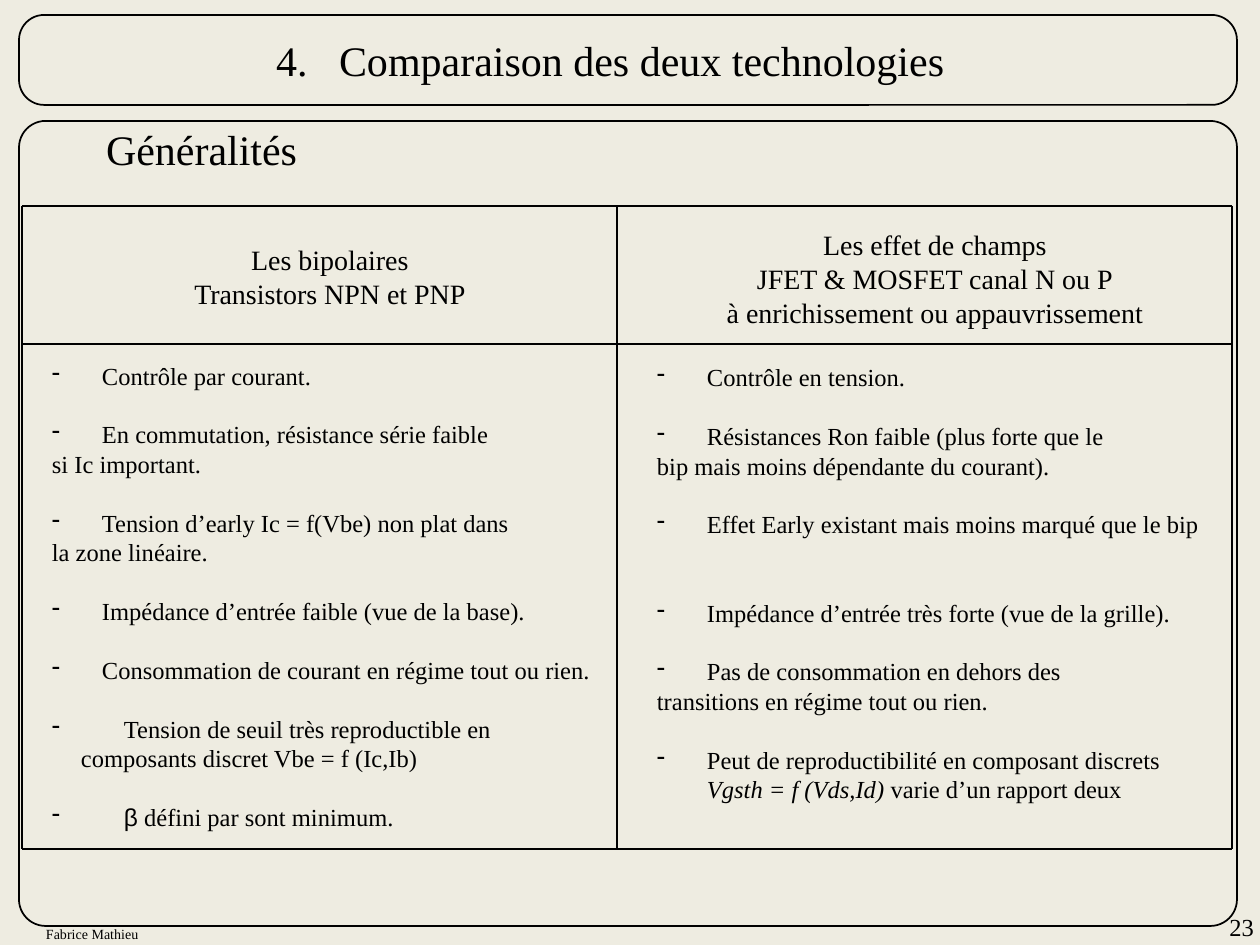
from dataclasses import dataclass

from lxml.etree import SubElement
from pptx import Presentation
from pptx.dml.color import RGBColor
from pptx.enum.shapes import MSO_CONNECTOR, MSO_SHAPE
from pptx.enum.text import MSO_AUTO_SIZE, PP_ALIGN
from pptx.oxml.ns import qn
from pptx.util import Pt

EMU_PER_PX = 914400 / 126
COLORS = {"background": "EEECE1", "ink": "000000"}
SERIF = "Times New Roman"
BLANK_LINE = 16.8  # points between two items


def px(length: int) -> int:
    return round(length * EMU_PER_PX)


def color(name: str) -> RGBColor:
    return RGBColor.from_string(COLORS[name])


@dataclass(frozen=True)
class Span:
    text: str
    italic: bool = False
    font: str = SERIF


@dataclass(frozen=True)
class Para:
    spans: tuple[Span, ...]
    size: int = 14
    align: PP_ALIGN = PP_ALIGN.LEFT
    before: float = 0
    margin: int = 0
    dash: bool = False
    tab: int = 0


@dataclass(frozen=True)
class Box:
    left: int
    top: int
    width: int
    height: int
    paras: tuple[Para, ...]
    inset: tuple[int, int] = (0, 0)
    wrap: bool = True


@dataclass(frozen=True)
class Frame:
    left: int
    top: int
    width: int
    height: int
    rounding: float


def plain(text: str, **options) -> Para:
    return Para((Span(text),), **options)


def heading(text: str) -> Para:
    return plain(text, size=16, align=PP_ALIGN.CENTER)


def item(*spans: Span | str, before: float = BLANK_LINE, margin: int = 50) -> Para:
    parts = tuple(Span(s) if isinstance(s, str) else s for s in spans)
    return Para(parts, before=before, margin=margin, dash=True)


def add_frame(page, frame: Frame) -> None:
    shape = page.shapes.add_shape(
        MSO_SHAPE.ROUNDED_RECTANGLE,
        px(frame.left), px(frame.top), px(frame.width), px(frame.height))
    shape.adjustments[0] = frame.rounding
    shape.shadow.inherit = False
    shape.fill.background()
    shape.line.color.rgb = color("ink")
    shape.line.width = Pt(1)


def add_rule(page, x1: int, y1: int, x2: int, y2: int) -> None:
    rule = page.shapes.add_connector(
        MSO_CONNECTOR.STRAIGHT, px(x1), px(y1), px(x2), px(y2))
    rule.line.color.rgb = color("ink")
    rule.line.width = Pt(0.75)
    SubElement(rule._element.spPr, qn("a:effectLst"))


def fill_para(target, para: Para) -> None:
    formats = {"alignment": para.align, "space_before": Pt(para.before)}
    for name, value in formats.items():
        setattr(target, name, value)
    properties = target._p.get_or_add_pPr()
    properties.set("marL", str(px(para.margin)))
    properties.set("indent", str(-px(para.margin) if para.dash else 0))
    if para.dash:
        SubElement(properties, qn("a:buChar"), char="-")
    else:
        SubElement(properties, qn("a:buNone"))
    if para.tab:
        tabs = SubElement(properties, qn("a:tabLst"))
        SubElement(tabs, qn("a:tab"), pos=str(px(para.tab)), algn="l")
    for span in para.spans:
        run = target.add_run()
        run.text = span.text
        run.font.color.rgb = color("ink")
        formats = {"name": span.font, "size": Pt(para.size), "italic": span.italic}
        for name, value in formats.items():
            setattr(run.font, name, value)


def add_box(page, box: Box) -> None:
    frame = page.shapes.add_textbox(
        px(box.left), px(box.top), px(box.width), px(box.height)).text_frame
    side, edge = map(px, box.inset)
    formats = {
        "word_wrap": box.wrap, "auto_size": MSO_AUTO_SIZE.SHAPE_TO_FIT_TEXT,
        "margin_left": side, "margin_right": side,
        "margin_top": edge, "margin_bottom": edge,
    }
    for name, value in formats.items():
        setattr(frame, name, value)
    for index, para in enumerate(box.paras):
        fill_para(frame.add_paragraph() if index else frame.paragraphs[0], para)


FRAMES = (Frame(19, 121, 1218, 805, 0.033), Frame(19, 15, 1218, 90, 0.279))

BIPOLAR = (
    heading("Les bipolaires"),
    heading("Transistors NPN et PNP"),
    item("Contrôle par courant.", before=28.8),
    item("En commutation, résistance série faible"),
    plain("si Ic important."),
    item("Tension d’early Ic = f(Vbe) non plat dans"),
    plain("la zone linéaire."),
    item("Impédance d’entrée faible (vue de la base)."),
    item("Consommation de courant en régime tout ou rien."),
    item("Tension de seuil très reproductible en", margin=72),
    plain("composants discret Vbe = f (Ic,Ib)", margin=29),
    item(Span("β", font="Arial"), " défini par sont minimum.", margin=72),
)

FIELD_EFFECT = (
    heading("Les effet de champs"),
    heading("JFET & MOSFET canal N ou P"),
    heading("à enrichissement ou appauvrissement"),
    item("Contrôle en tension.", before=19.2),
    item("Résistances Ron faible (plus forte que le"),
    plain("bip mais moins dépendante du courant)."),
    item("Effet Early existant mais moins marqué que le bip"),
    item("Impédance d’entrée très forte (vue de la grille).", before=2 * BLANK_LINE),
    item("Pas de consommation en dehors des"),
    plain("transitions en régime tout ou rien."),
    item("Peut de reproductibilité en composant discrets"),
    Para((Span("Vgsth = f (Vds,Id) ", italic=True),
          Span("varie d’un rapport deux")), margin=50),
)

BOXES = (
    Box(33, 920, 122, 30, (plain("Fabrice Mathieu", size=8),), (13, 6), False),
    Box(52, 243, 556, 593, BIPOLAR),
    Box(657, 228, 556, 581, FIELD_EFFECT),
    Box(93, 118, 218, 64, (plain("Généralités", size=24),), (13, 6), False),
    Box(263, 29, 736, 63,
        (plain("4.\tComparaison des deux technologies", size=24, tab=99),),
        (13, 6), False),
    Box(1215, 912, 39, 30, (plain("23", align=PP_ALIGN.RIGHT),)),
)

COLUMN_EDGES = (22, 617, 1232)
ROW_EDGES = (206, 344, 849)


def main() -> None:
    deck = Presentation()
    deck.slide_width, deck.slide_height = px(1260), px(945)
    page = deck.slides.add_slide(deck.slide_layouts[6])
    page.background.fill.solid()
    page.background.fill.fore_color.rgb = color("background")

    # Rounded frames for title and content
    for frame in FRAMES:
        add_frame(page, frame)

    # Comparison grid
    for x in COLUMN_EDGES:
        add_rule(page, x, ROW_EDGES[0], x, ROW_EDGES[-1])
    for y in ROW_EDGES:
        add_rule(page, COLUMN_EDGES[0], y, COLUMN_EDGES[-1], y)

    # Titles, columns and footer
    for box in BOXES:
        add_box(page, box)

    deck.save("out.pptx")


if __name__ == "__main__":
    main()
